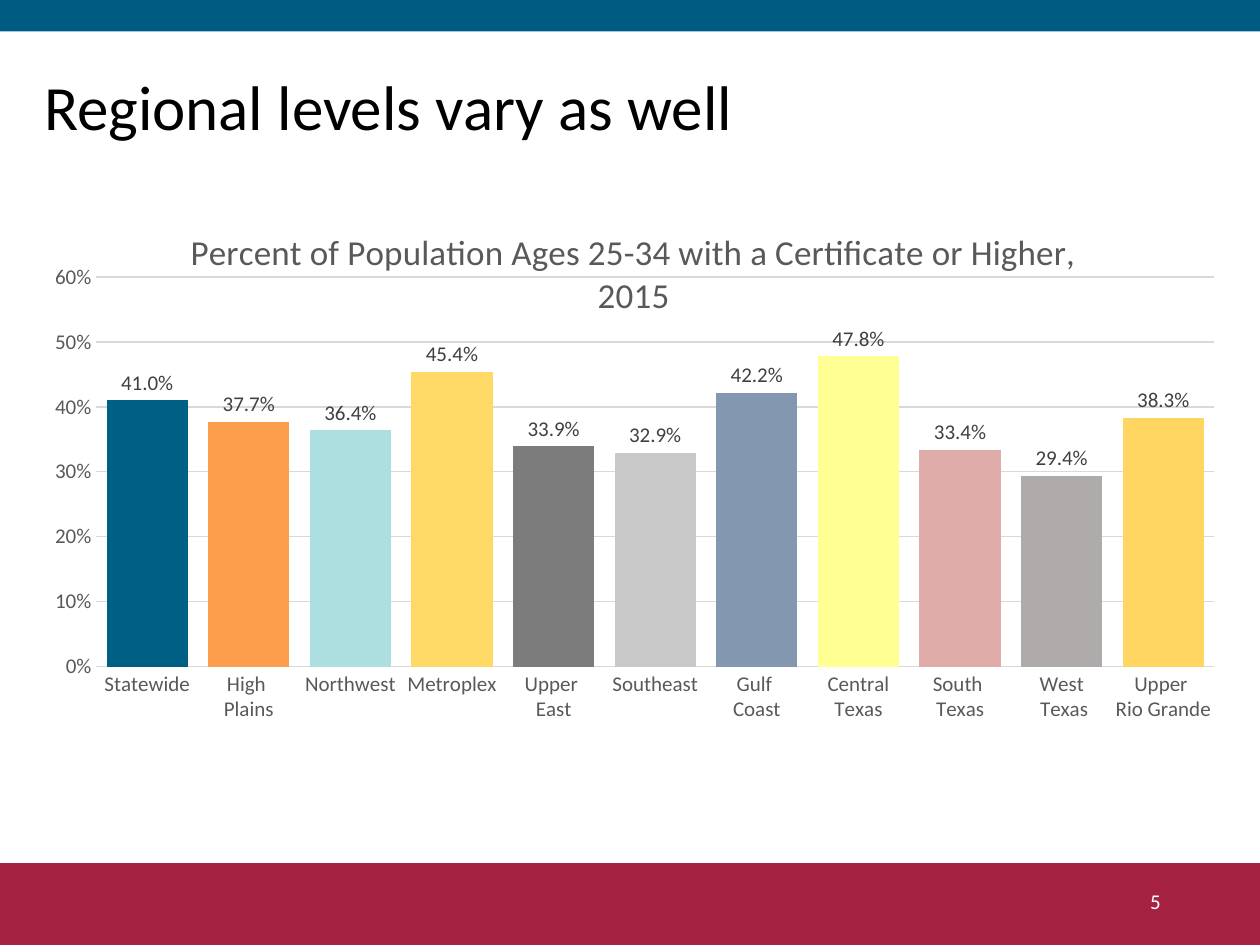
from typing import NamedTuple

from lxml import etree
from pptx import Presentation
from pptx import util as u
from pptx.chart import data as cd
from pptx.dml.color import RGBColor
from pptx.enum import chart as ch, shapes, text
from pptx.oxml import ns

FONT = "Calibri"


class Box(NamedTuple):
    left: float
    top: float
    width: float
    height: float

    def pts(self) -> list:
        return [u.Pt(v) for v in self]


class Band(NamedTuple):
    box: Box
    color: str


class Region(NamedTuple):
    name: str
    share: float
    color: str


BANDS = [
    Band(Box(0, 493.2, 720, 48.24), "A62242"),
    Band(Box(0, 0, 720, 18), "005B83"),
]
REGIONS = [
    Region("Statewide", 0.41, "005F84"),
    Region("High \nPlains", 0.377, "FC9E4C"),
    Region("Northwest", 0.364, "AEDFE0"),
    Region("Metroplex", 0.454, "FFD966"),
    Region("Upper \nEast", 0.339, "7C7C7C"),
    Region("Southeast", 0.329, "C9C9C9"),
    Region("Gulf \nCoast", 0.422, "8497B0"),
    Region("Central Texas", 0.478, "FFFF93"),
    Region("South \nTexas", 0.334, "DFACA9"),
    Region("West\n Texas", 0.294, "AFABAB"),
    Region("Upper \nRio Grande", 0.383, "FFD661"),
]


def rgb(value: str) -> RGBColor:
    return RGBColor.from_string(value)


def style(font, size: float, color: str) -> None:
    font.name = FONT
    font.size = u.Pt(size)
    font.bold = False
    font.color.rgb = rgb(color)


def write(tf, content: str, size: float, color: str, align) -> None:
    tf.word_wrap = True
    tf.vertical_anchor = text.MSO_ANCHOR.MIDDLE
    p = tf.paragraphs[0]
    p.alignment = align
    r = p.add_run()
    r.text = content
    style(r.font, size, color)


def add_band(s, band: Band) -> None:
    sp = s.shapes.add_shape(shapes.MSO_SHAPE.RECTANGLE, *band.box.pts())
    sp.shadow.inherit = False
    sp.fill.solid()
    sp.fill.fore_color.rgb = rgb(band.color)
    sp.line.fill.background()


def manual_layout(parent, index: int, **values) -> None:
    for old in parent.findall(ns.qn("c:layout")):
        parent.remove(old)
    layout = etree.Element(ns.qn("c:layout"))
    manual = etree.SubElement(layout, ns.qn("c:manualLayout"))
    for tag, value in values.items():
        etree.SubElement(manual, ns.qn(f"c:{tag}")).set("val", str(value))
    parent.insert(index, layout)


def style_axis(axis) -> None:
    axis.major_tick_mark = ch.XL_TICK_MARK.NONE
    axis.minor_tick_mark = ch.XL_TICK_MARK.NONE
    style(axis.tick_labels.font, 12, "595959")


def style_line(line) -> None:
    line.color.rgb = rgb("D9D9D9")
    line.width = u.Pt(0.75)


def add_region_chart(s, box: Box, regions: list[Region]) -> None:
    data = cd.CategoryChartData(number_format="0.0%")
    data.categories = [region.name for region in regions]
    data.add_series("Series 1", [region.share for region in regions])
    kind = ch.XL_CHART_TYPE.COLUMN_CLUSTERED
    chart = s.shapes.add_chart(kind, *box.pts(), data).chart
    style(chart.font, 10, "000000")
    chart.has_legend = False

    chart.has_title = True
    title = chart.chart_title
    r = title.text_frame.paragraphs[0].add_run()
    r.text = "Percent of Population Ages 25-34 with a Certificate or Higher, 2015"
    style(r.font, 20, "595959")
    title.include_in_layout = True
    manual_layout(title._element, 1, xMode="edge", yMode="edge", x=0.13, y=0.04)

    style_axis(chart.category_axis)
    style_line(chart.category_axis.format.line)
    values = chart.value_axis
    style_axis(values)
    values.minimum_scale, values.maximum_scale, values.major_unit = 0, 0.6, 0.1
    values.format.line.fill.background()
    style_line(values.major_gridlines.format.line)
    values.tick_labels.number_format = "0%"
    values.tick_labels.number_format_is_linked = False

    plot = chart.plots[0]
    plot.gap_width = 25
    plot.vary_by_categories = False
    series = plot.series[0]
    series.format.fill.solid()
    series.format.fill.fore_color.rgb = rgb(regions[0].color)
    for i, region in enumerate(regions[1:], 1):
        fill = series.points[i].format.fill
        fill.solid()
        fill.fore_color.rgb = rgb(region.color)
    labels = series.data_labels
    labels.show_value = True
    labels.position = ch.XL_LABEL_POSITION.OUTSIDE_END
    labels.number_format = "0.0%"
    labels.number_format_is_linked = False
    style(labels.font, 12, "404040")

    area = chart._chartSpace.find(".//" + ns.qn("c:plotArea"))
    manual_layout(area, 0, layoutTarget="inner", xMode="edge", yMode="edge",
                  x=0.057, y=0.143, w=0.928, h=0.714)


def main() -> None:
    prs = Presentation()
    prs.slide_width, prs.slide_height = u.Pt(720), u.Pt(540)
    s = prs.slides.add_slide(prs.slide_layouts[5])
    for band in BANDS:
        add_band(s, band)

    title = s.shapes.title
    title.left, title.top, title.width, title.height = Box(18, 28.8, 676.8, 68.4).pts()
    write(title.text_frame, "Regional levels vary as well", 36, "000000",
          text.PP_ALIGN.LEFT)
    title.text_frame.paragraphs[0].line_spacing = 0.9

    number = s.shapes.add_textbox(*Box(508.32, 500.4, 162, 28.8).pts())
    write(number.text_frame, "5", 12, "FFFFFF", text.PP_ALIGN.RIGHT)
    add_region_chart(s, Box(15.84, 113.76, 688.32, 311.76), REGIONS)
    prs.save("out.pptx")


if __name__ == "__main__":
    main()
